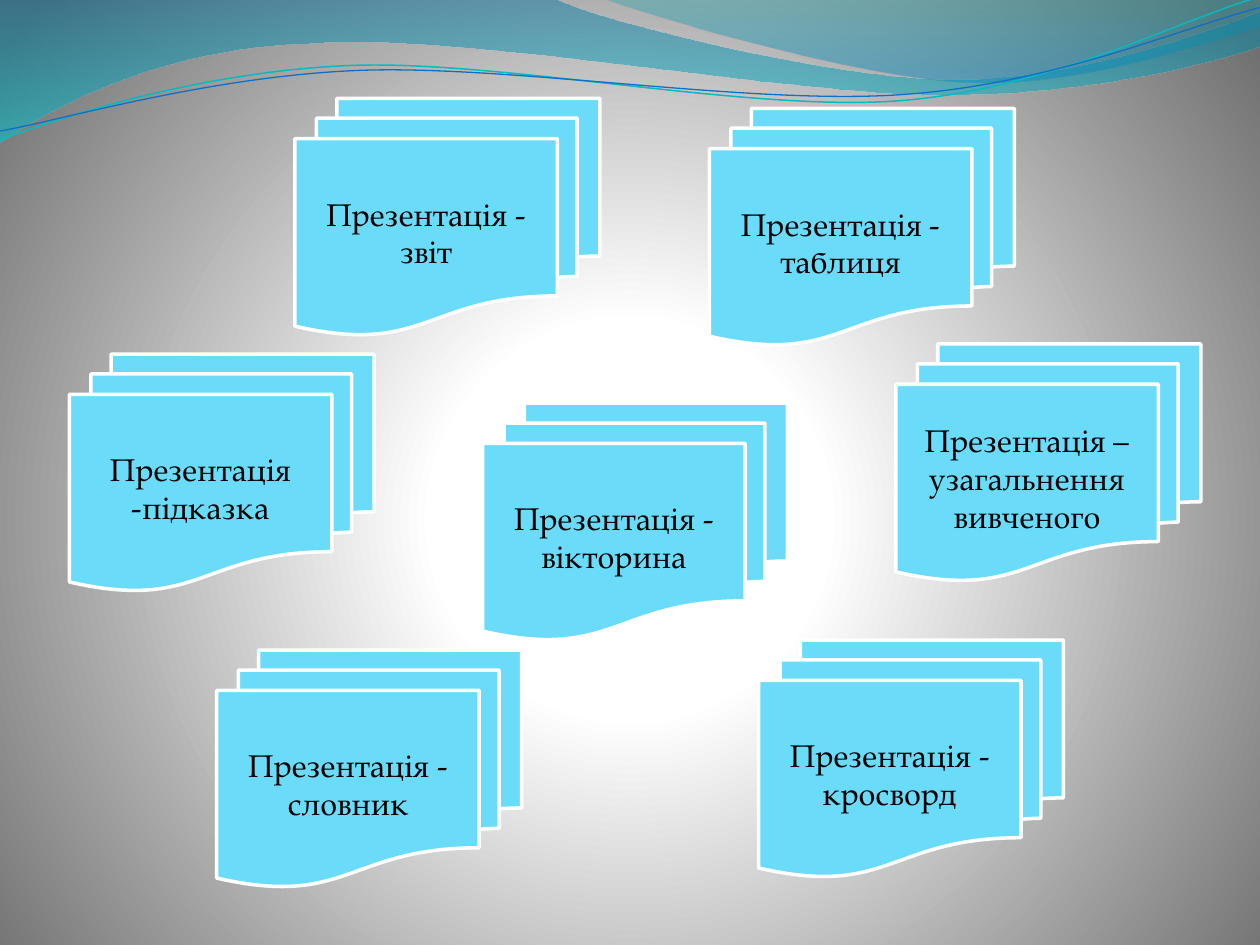
import math

from lxml import etree
from pptx import Presentation
from pptx import util as u
from pptx.dml.color import RGBColor
from pptx.enum import shapes, text
from pptx.oxml import parse_xml
from pptx.oxml.ns import qn

FONT = "TeX Gyre Pagella"
CARD_SIZE = (2.42, 1.88)
STRAND_TILT = -2.7


def color(value):
    return RGBColor.from_string(value)


def gradient(stops, direction):
    """Gradient fill from (position %, colour, opacity %) stops."""
    root = parse_xml(
        '<a:gradFill xmlns:a="http://schemas.openxmlformats.org/drawingml/2006/main"'
        f' rotWithShape="1"><a:gsLst/>{direction}</a:gradFill>')
    for position, value, opacity in stops:
        stop = etree.SubElement(root[0], qn("a:gs"), pos=str(position * 1000))
        fill = etree.SubElement(stop, qn("a:srgbClr"), val=value)
        if opacity < 100:
            etree.SubElement(fill, qn("a:alpha"), val=str(opacity * 1000))
    return root


def pairs(numbers):
    return list(zip(numbers[::2], numbers[1::2]))


def turn(points, center, degrees):
    """Points turned clockwise about a center."""
    cos, sin = math.cos(math.radians(degrees)), math.sin(math.radians(degrees))
    cx, cy = center
    return [(cx + (x - cx) * cos - (y - cy) * sin,
             cy + (x - cx) * sin + (y - cy) * cos) for x, y in points]


class SlideBuilder:
    down = '<a:lin ang="5400000" scaled="0"/>'
    glow = ('<a:path path="circle"><a:fillToRect l="10000" t="110000"'
            ' r="10000" b="100000"/></a:path>')

    def __init__(self, slide):
        self.slide = slide

    def background(self, stops):
        self.slide.background.fill.solid()
        solid = next(self.slide.element.iter(qn("a:solidFill")))
        solid.getparent().replace(solid, gradient(stops, self.glow))

    def outline(self, points, counts, close):
        """Freeform whose segments take 1 point (line) or 3 points (curve)."""
        corners = [(u.Inches(x), u.Inches(y)) for x, y in points]
        builder = self.slide.shapes.build_freeform(*corners[0])
        builder.add_line_segments(corners[1:], close=close)
        shape = builder.convert_to_shape()
        shape.shadow.inherit = False
        lines = iter(list(shape.element.iter(qn("a:lnTo"))))
        for count in counts:
            group = [next(lines) for _ in range(count)]
            if count == 3:
                curve = etree.Element(qn("a:cubicBezTo"))
                group[0].addprevious(curve)
                for line in group:
                    curve.append(line[0])
                    line.getparent().remove(line)
        return shape

    def wave(self, start, segments, stops):
        groups = [pairs(segment) for segment in segments]
        points = [start] + sum(groups, [])
        shape = self.outline(points, [len(group) for group in groups], True)
        shape.line.fill.background()
        shape.fill.solid()
        solid = shape.element.spPr.find(qn("a:solidFill"))
        solid.getparent().replace(solid, gradient(stops, self.down))

    def strand(self, center, start, curves, value, width):
        groups = [pairs(curve) for curve in curves]
        points = turn([start] + sum(groups, []), center, -STRAND_TILT)
        shape = self.outline(points, [3] * len(groups), False)
        shape.rotation = STRAND_TILT
        shape.fill.background()
        shape.line.color.rgb = color(value)
        shape.line.width = u.Pt(width)

    def card(self, left, top, label):
        shape = self.slide.shapes.add_shape(
            shapes.MSO_SHAPE.FLOWCHART_MULTIDOCUMENT,
            *map(u.Inches, (left, top, *CARD_SIZE)))
        shape.shadow.inherit = False
        shape.fill.solid()
        shape.fill.fore_color.rgb = color("6BDBFA")
        shape.line.color.rgb = color("FFFFFF")
        shape.line.width = u.Pt(2)
        frame = shape.text_frame
        frame.word_wrap = True
        frame.vertical_anchor = text.MSO_ANCHOR.MIDDLE
        paragraph = frame.paragraphs[0]
        paragraph.alignment = text.PP_ALIGN.CENTER
        run = paragraph.add_run()
        run.text = label
        run.font.name = FONT
        run.font.size = u.Pt(18)
        run.font.color.rgb = color("000000")


def main():
    deck = Presentation()
    deck.slide_width, deck.slide_height = u.Inches(10), u.Inches(7.5)
    page = SlideBuilder(deck.slides.add_slide(deck.slide_layouts[6]))

    # Background glow
    page.background([(0, "FFFFFF", 100), (25, "FFFFFF", 100), (100, "707070", 100)])

    # Waves along the top edge
    page.wave((0, 0), [
        (4.4, -0.01), (4.76, 0.17, 6.64, 0.63, 7.58, 0.63),
        (8.53, 0.63, 9.58, 0.26, 10, 0.09), (10.01, 0.36),
        (9.83, 0.44, 8.7, 0.76, 7.46, 0.75), (6.22, 0.75, 3.82, 0.28, 2.57, 0.34),
        (1.29, 0.36, 0.46, 0.83, -0.01, 1.13), (0, 0),
    ], [(0, "0074A1", 45), (100, "00C6CF", 55)])
    page.wave((4.79, -0.01), [
        (5.09, 0.11, 6.82, 0.62, 7.69, 0.65),
        (8.56, 0.69, 9.61, 0.32, 10, 0.21), (10, 0), (4.79, -0.01),
    ], [(0, "00A1A9", 30), (80, "008BBF", 45)])

    # Thin strands under the waves
    page.strand((4.99, 0.58), (0, 1.11), [
        (0.48, 0.93, 1.58, 0.57, 2.77, 0.52), (3.95, 0.47, 5.93, 0.89, 7.13, 0.8),
        (8.33, 0.71, 9.38, 0.15, 9.98, -0.02)], "0AB8BF", 0.85)
    page.strand((5, 0.59), (0, 1.04), [
        (0.47, 0.96, 1.64, 0.61, 2.83, 0.56), (4.03, 0.51, 5.97, 0.84, 7.17, 0.75),
        (8.36, 0.67, 9.41, 0.21, 10, 0.06)], "0F6FC6", 0.75)

    # Kinds of presentation
    for left, top, label in [
        (2.34, 0.78, "Презентація - звіт"),
        (5.63, 0.86, "Презентація - таблиця"),
        (3.83, 3.2, "Презентація - вікторина"),
        (1.72, 5.16, "Презентація - словник"),
        (7.11, 2.73, "Презентація –узагальнення вивченого"),
        (6.02, 5.08, "Презентація - кросворд"),
        (0.55, 2.81, "Презентація -підказка"),
    ]:
        page.card(left, top, label)

    deck.save("out.pptx")


if __name__ == "__main__":
    main()
